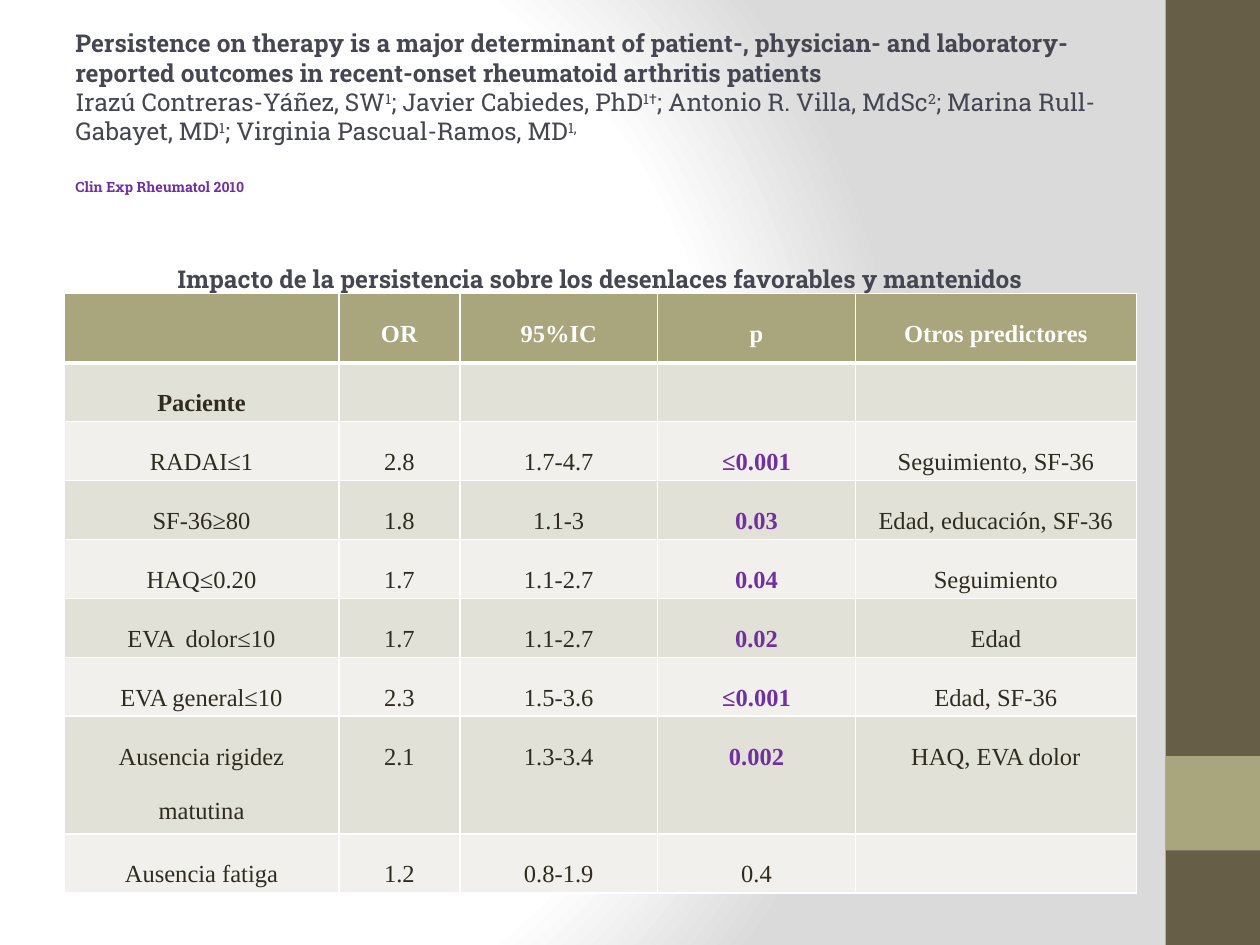
from lxml import etree
from pptx import Presentation
from pptx.dml.color import RGBColor
from pptx.enum.shapes import MSO_SHAPE
from pptx.enum.text import MSO_ANCHOR, PP_ALIGN
from pptx.oxml import parse_xml
from pptx.oxml.ns import qn
from pptx.util import Inches, Pt

WHITE = RGBColor(0xFF, 0xFF, 0xFF)
SILVER = RGBColor(0xDA, 0xDA, 0xDA)
BROWN = RGBColor(0x67, 0x5E, 0x47)
OLIVE = RGBColor(0xA9, 0xA5, 0x7C)
SLATE = RGBColor(0x46, 0x46, 0x53)
PURPLE = RGBColor(0x70, 0x30, 0xA0)
INK = RGBColor(0x2F, 0x2B, 0x20)
BANDS = (RGBColor(0xE2, 0xE1, 0xD7), RGBColor(0xF1, 0xF0, 0xEC))

HEADING = {"name": "Roboto Slab", "size": Pt(14), "bold": True}
CELL = {"name": "Times New Roman", "size": Pt(14), "bold": False}
DRAWING = "http://schemas.openxmlformats.org/drawingml/2006/main"

PAPER = (
    "Persistence on therapy is a major determinant of patient-, physician- "
    "and laboratory- reported outcomes in recent-onset rheumatoid arthritis patients"
)
AUTHORS = [
    ("Irazú Contreras-Yáñez, SW", "1"),
    ("; Javier Cabiedes, PhD", "1†"),
    ("; Antonio R. Villa, MdSc", "2"),
    ("; Marina Rull-Gabayet, MD", "1"),
    ("; Virginia Pascual-Ramos, MD", "1,"),
]
JOURNAL = "Clin Exp Rheumatol 2010"
CAPTION = "Impacto de la persistencia sobre los desenlaces favorables y mantenidos"
COLUMNS = (2.18, 0.96, 1.57, 1.57, 2.23)
ROWS = [
    ("", "OR", "95%IC", "p", "Otros predictores"),
    ("Paciente", "", "", "", ""),
    ("RADAI≤1", "2.8", "1.7-4.7", "≤0.001", "Seguimiento, SF-36"),
    ("SF-36≥80", "1.8", "1.1-3", "0.03", "Edad, educación, SF-36"),
    ("HAQ≤0.20", "1.7", "1.1-2.7", "0.04", "Seguimiento"),
    ("EVA  dolor≤10", "1.7", "1.1-2.7", "0.02", "Edad"),
    ("EVA general≤10", "2.3", "1.5-3.6", "≤0.001", "Edad, SF-36"),
    ("Ausencia rigidez matutina", "2.1", "1.3-3.4", "0.002", "HAQ, EVA dolor"),
    ("Ausencia fatiga", "1.2", "0.8-1.9", "0.4", ""),
]


def add_span(para, text, color, formats, raised=False):
    """Add a formatted run, optionally as superscript."""
    span = para.add_run()
    span.text = text
    for name, value in formats.items():
        setattr(span.font, name, value)
    span.font.color.rgb = color
    if raised:
        span._r.get_or_add_rPr().set("baseline", "30000")


def paint_background(page):
    """Fill the page with a radial gradient from white to silver."""
    fill = page.background.fill
    fill.gradient()
    gradient = page._element.find(".//" + qn("a:gradFill"))
    stops = "".join(
        f'<a:gs pos="{place}000"><a:srgbClr val="{color}"/></a:gs>'
        for place, color in ((0, WHITE), (75, WHITE), (100, SILVER))
    )
    radial = parse_xml(
        f'<a:gradFill xmlns:a="{DRAWING}" rotWithShape="1"><a:gsLst>{stops}</a:gsLst>'
        '<a:path path="circle"><a:fillToRect l="20000" t="50000" r="100000" b="50000"/>'
        "</a:path></a:gradFill>"
    )
    gradient.getparent().replace(gradient, radial)


def add_sidebar(page, left, top, width, height):
    """Draw the brown side band with its olive square."""
    for color, offset, tall in ((BROWN, 0, height), (OLIVE, Inches(6), width)):
        band = page.shapes.add_shape(MSO_SHAPE.RECTANGLE, left, top + offset, width, tall)
        band.shadow.inherit = False
        band.fill.solid()
        band.fill.fore_color.rgb = color
        band.line.fill.background()


def add_text_box(page, *bounds):
    """Add a wrapping, vertically centred text box and return its frame."""
    frame = page.shapes.add_textbox(*bounds).text_frame
    frame.word_wrap = True
    frame.vertical_anchor = MSO_ANCHOR.MIDDLE
    return frame


def add_title(page, *bounds):
    """Write the paper title, its authors and the journal."""
    frame = add_text_box(page, *bounds)
    add_span(frame.paragraphs[0], PAPER, SLATE, HEADING)
    authors = frame.add_paragraph()
    for name, mark in AUTHORS:
        add_span(authors, name, SLATE, HEADING | {"bold": False})
        add_span(authors, mark, SLATE, HEADING | {"bold": False}, raised=True)
    journal = frame.add_paragraph()
    journal.space_before = Pt(17)
    add_span(journal, JOURNAL, PURPLE, HEADING, raised=True)


def add_caption(page, *bounds):
    """Write the centred heading above the table."""
    para = add_text_box(page, *bounds).paragraphs[0]
    para.alignment = PP_ALIGN.CENTER
    add_span(para, CAPTION, SLATE, HEADING)


def add_borders(cell, row):
    """Give a cell white borders, thick below the header row."""
    weights = {"lnL": 1, "lnR": 1, "lnT": 3 if row == 1 else 1, "lnB": 3 if row == 0 else 1}
    for tag, weight in weights.items():
        edge = etree.SubElement(cell._tc.get_or_add_tcPr(), qn(f"a:{tag}"), w=str(Pt(weight)))
        paint = etree.SubElement(edge, qn("a:solidFill"))
        etree.SubElement(paint, qn("a:srgbClr"), val=str(WHITE))


def cell_style(row, column, text):
    """Return the text colour and boldness for a table position."""
    if row == 0:
        return WHITE, True
    if column == 3 and text != "0.4":
        return PURPLE, True
    return INK, row == 1


def add_results(page, left, top, width, height):
    """Build the table of outcomes with banded rows."""
    holder = page.shapes.add_table(len(ROWS), len(COLUMNS), left, top, width, height)
    table = holder.table
    for column, wide in zip(table.columns, COLUMNS):
        column.width = Inches(wide)
    for row, texts in enumerate(ROWS):
        table.rows[row].height = Inches(0.36 if row else 0.55)
        for column, text in enumerate(texts):
            cell = table.cell(row, column)
            add_borders(cell, row)
            cell.fill.solid()
            cell.fill.fore_color.rgb = BANDS[(row - 1) % 2] if row else OLIVE
            if not text:
                continue
            cell.margin_left = cell.margin_right = Inches(0.07)
            cell.margin_top = cell.margin_bottom = 0
            para = cell.text_frame.paragraphs[0]
            para.alignment = PP_ALIGN.CENTER
            para.line_spacing = 2.0
            color, bold = cell_style(row, column, text)
            add_span(para, text, color, CELL | {"bold": bold})
    holder.height = height


def main():
    """Build and save the slide."""
    deck = Presentation()
    deck.slide_width, deck.slide_height = Inches(10), Inches(7.5)
    page = deck.slides.add_slide(deck.slide_layouts[6])
    paint_background(page)
    add_sidebar(page, Inches(9.25), 0, Inches(0.75), Inches(7.5))
    add_title(page, Inches(0.5), Inches(0.3), Inches(8.33), Inches(1.25))
    add_results(page, Inches(0.51), Inches(2.33), Inches(8.5), Inches(4.75))
    add_caption(page, Inches(0.67), Inches(2.04), Inches(8.19), Inches(0.34))
    deck.save("out.pptx")


if __name__ == "__main__":
    main()
